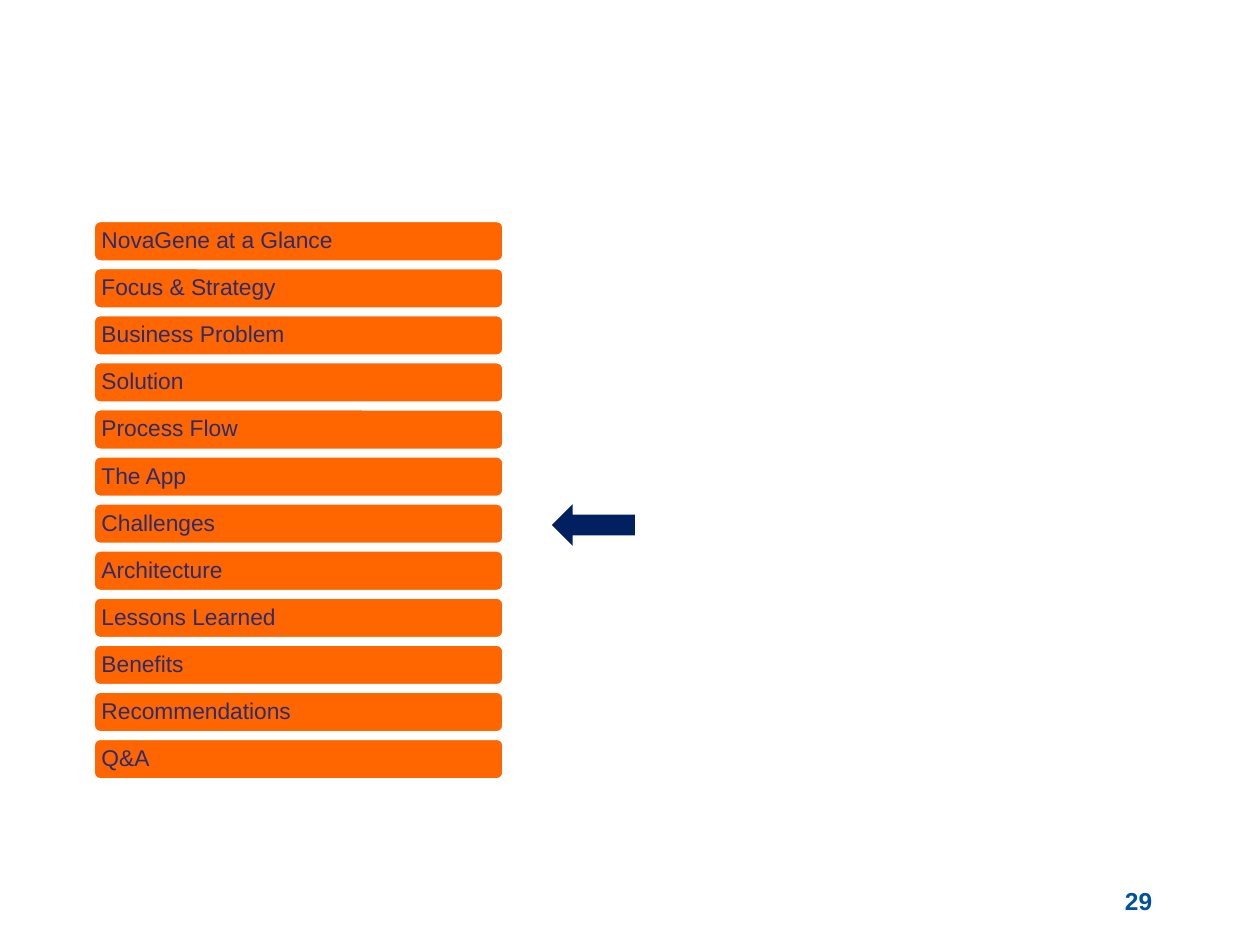
from pptx import Presentation
from pptx import util as u
from pptx.dml.color import RGBColor
from pptx.enum import shapes, text

COLORS = {
    "bar": "FF6600",
    "bar_line": "FFFFFF",
    "bar_text": "2B2B71",
    "arrow": "002060",
    "number": "00529C",
}
TOPICS = [
    "NovaGene at a Glance", "Focus & Strategy", "Business Problem", "Solution",
    "Process Flow", "The App", "Challenges", "Architecture",
    "Lessons Learned", "Benefits", "Recommendations", "Q&A",
]
CURRENT_TOPIC = "Challenges"
FIRST_TOP, LAST_TOP = 1.75, 5.86
BAR_LEFT, BAR_WIDTH, BAR_HEIGHT = 0.74, 3.26, 0.33


def color(name):
    return RGBColor.from_string(COLORS[name])


def write(frame, words, size, fill, bold=False, spacing=None,
          anchor=text.MSO_ANCHOR.TOP, inset=None):
    frame.word_wrap = True
    frame.vertical_anchor = anchor
    if inset is not None:
        frame.margin_left = frame.margin_right = u.Inches(inset)
        frame.margin_top = frame.margin_bottom = u.Inches(inset)
    para = frame.paragraphs[0]
    para.alignment = text.PP_ALIGN.LEFT
    if spacing:
        para.line_spacing = spacing
    span = para.add_run()
    span.text = words
    span.font.name = "Arial"
    span.font.size = u.Pt(size)
    span.font.bold = bold
    span.font.color.rgb = color(fill)


class AgendaSlide:
    def __init__(self, deck):
        self.page = deck.slides.add_slide(deck.slide_layouts[6])

    def shape(self, kind, left, top, width, height, fill, line=None):
        shape = self.page.shapes.add_shape(
            kind, u.Inches(left), u.Inches(top), u.Inches(width), u.Inches(height))
        shape.shadow.inherit = False
        shape.fill.solid()
        shape.fill.fore_color.rgb = color(fill)
        if line:
            shape.line.color.rgb = color(line)
            shape.line.width = u.Pt(2)
        else:
            shape.line.fill.background()
        return shape

    def bar(self, words, top):
        bar = self.shape(shapes.MSO_SHAPE.ROUNDED_RECTANGLE, BAR_LEFT, top,
                         BAR_WIDTH, BAR_HEIGHT, "bar", line="bar_line")
        write(bar.text_frame, words, size=13, fill="bar_text", spacing=0.9,
              anchor=text.MSO_ANCHOR.MIDDLE, inset=0.05)

    def arrow(self, top):
        self.shape(shapes.MSO_SHAPE.LEFT_ARROW, 4.38, top, 0.66, BAR_HEIGHT, "arrow")

    def number(self, words):
        box = self.page.shapes.add_textbox(
            u.Inches(8.83), u.Inches(6.98), u.Inches(2.33), u.Inches(0.52))
        write(box.text_frame, words, size=14, fill="number", bold=True)


def main():
    deck = Presentation()
    deck.slide_width, deck.slide_height = u.Inches(10), u.Inches(7.5)
    agenda = AgendaSlide(deck)
    agenda.number("29")
    pitch = (LAST_TOP - FIRST_TOP) / (len(TOPICS) - 1)
    for index, topic in enumerate(TOPICS):
        agenda.bar(topic, FIRST_TOP + index * pitch)
    agenda.arrow(FIRST_TOP + TOPICS.index(CURRENT_TOPIC) * pitch + 0.01)
    deck.save("out.pptx")


if __name__ == "__main__":
    main()
